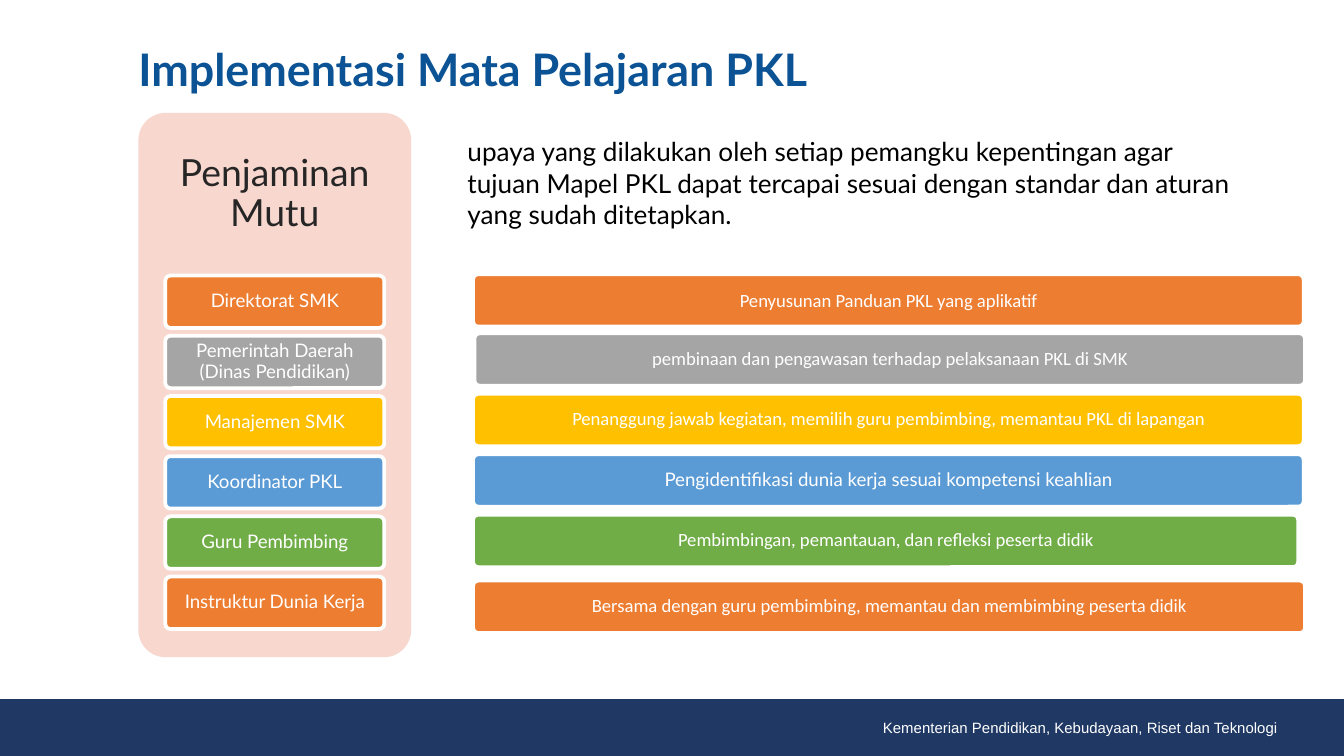
from pptx import Presentation
from pptx.dml.color import RGBColor
from pptx.enum.shapes import MSO_SHAPE
from pptx.enum.text import MSO_ANCHOR, MSO_AUTO_SIZE, PP_ALIGN
from pptx.util import Inches, Pt

WHITE = RGBColor(0xFF, 0xFF, 0xFF)
BLACK = RGBColor(0x00, 0x00, 0x00)
DARK = RGBColor(0x26, 0x26, 0x26)
TITLE_BLUE = RGBColor(0x0B, 0x53, 0x94)
NAVY = RGBColor(0x1F, 0x38, 0x64)
PINK = RGBColor(0xF8, 0xD7, 0xCE)
ORANGE = RGBColor(0xED, 0x7D, 0x31)
GRAY = RGBColor(0xA5, 0xA5, 0xA5)
GOLD = RGBColor(0xFF, 0xC0, 0x00)
BLUE = RGBColor(0x5B, 0x9B, 0xD5)
GREEN = RGBColor(0x70, 0xAD, 0x47)

FIRST_ROLE, LAST_ROLE, ROW_HEIGHT = 2.05, 4.29, 0.39

# Role, colour, duty, then font, left, top and width of the duty bar
ROWS = [
    ("Direktorat SMK", ORANGE, "Penyusunan Panduan PKL yang aplikatif",
     "Calibri", 3.52, 2.04, 6.18),
    ("Pemerintah Daerah (Dinas Pendidikan)", GRAY,
     "pembinaan dan pengawasan terhadap pelaksanaan PKL di SMK",
     "Calibri", 3.53, 2.48, 6.18),
    ("Manajemen SMK", GOLD,
     "Penanggung jawab kegiatan, memilih guru pembimbing, memantau PKL di lapangan",
     "Calibri", 3.52, 2.93, 6.18),
    ("Koordinator PKL", BLUE,
     "Pengidentifikasi dunia kerja sesuai kompetensi keahlian",
     "Lato", 3.52, 3.38, 6.18),
    ("Guru Pembimbing", GREEN,
     "Pembimbingan, pemantauan, dan refleksi peserta didik",
     "Calibri", 3.52, 3.83, 6.14),
    ("Instruktur Dunia Kerja", ORANGE,
     "Bersama dengan guru pembimbing, memantau dan membimbing peserta didik",
     "Calibri", 3.52, 4.32, 6.19),
]
ROW_PITCH = (LAST_ROLE - FIRST_ROLE) / (len(ROWS) - 1)


def write(tf, text, size=10, font="Lato", color=WHITE, bold=False,
          align=PP_ALIGN.LEFT, anchor=MSO_ANCHOR.TOP, spacing=1.0,
          insets=(0.1, 0.05)):
    """Put one formatted paragraph in a text frame."""
    tf.word_wrap = True
    tf.auto_size = MSO_AUTO_SIZE.NONE
    tf.vertical_anchor = anchor
    tf.margin_left = tf.margin_right = Inches(insets[0])
    tf.margin_top = tf.margin_bottom = Inches(insets[1])
    p = tf.paragraphs[0]
    p.alignment = align
    p.line_spacing = spacing
    r = p.add_run()
    r.text = text
    r.font.size = Pt(size)
    r.font.name = font
    r.font.bold = bold
    r.font.color.rgb = color


class Deck:
    def __init__(self):
        self.prs = Presentation()
        self.prs.slide_width = Inches(10)
        self.prs.slide_height = Inches(10) * 9 // 16
        self.s = self.prs.slides.add_slide(self.prs.slide_layouts[5])

    def title(self, text, x, y, w, h, **fmt):
        sp = self.s.shapes.title
        sp.left, sp.top, sp.width, sp.height = map(Inches, (x, y, w, h))
        write(sp.text_frame, text, **fmt)

    def text(self, text, x, y, w, h, **fmt):
        sp = self.s.shapes.add_textbox(*map(Inches, (x, y, w, h)))
        write(sp.text_frame, text, **fmt)

    def box(self, x, y, w, h, fill, line=None, line_width=1, rounded=True):
        kind = MSO_SHAPE.ROUNDED_RECTANGLE if rounded else MSO_SHAPE.RECTANGLE
        sp = self.s.shapes.add_shape(kind, *map(Inches, (x, y, w, h)))
        sp.shadow.inherit = False
        sp.fill.solid()
        sp.fill.fore_color.rgb = fill
        if rounded:
            sp.adjustments[0] = 0.1
        if line is None:
            sp.line.fill.background()
        else:
            sp.line.color.rgb = line
            sp.line.width = Pt(line_width)
        return sp

    def bar(self, text, x, y, w, fill, **fmt):
        sp = self.box(x, y, w, ROW_HEIGHT, fill, line=WHITE, line_width=2)
        write(sp.text_frame, text, align=PP_ALIGN.CENTER,
              anchor=MSO_ANCHOR.MIDDLE, insets=(0.04, 0.03), **fmt)


def main():
    deck = Deck()

    # Footer band
    deck.box(0, 5.21, 10, 0.41, NAVY, line=NAVY, rounded=False)
    deck.text("Kementerian Pendidikan, Kebudayaan, Riset dan Teknologi",
              5.67, 5.31, 3.91, 0.2, size=8, font="Arial",
              align=PP_ALIGN.RIGHT, insets=(0.07, 0.04))

    # Title and definition
    deck.title("Implementasi Mata Pelajaran PKL", 0.93, 0.21, 8.44, 0.63,
               size=24, color=TITLE_BLUE, bold=True, insets=(0.1, 0.1))
    deck.text("upaya yang dilakukan oleh setiap pemangku kepentingan agar "
              "tujuan Mapel PKL dapat tercapai sesuai dengan standar dan "
              "aturan yang sudah ditetapkan.",
              3.38, 0.96, 5.99, 0.81, size=14, color=BLACK)

    # Panel with its heading
    deck.box(1.03, 0.84, 2.03, 4.05, PINK)
    deck.text("Penjaminan Mutu", 1.03, 0.84, 2.03, 1.21, size=20, color=DARK,
              align=PP_ALIGN.CENTER, anchor=MSO_ANCHOR.MIDDLE, spacing=0.9,
              insets=(0.08, 0.08))

    # Roles in the panel, duties beside them
    for i, (role, color, duty, font, x, y, w) in enumerate(ROWS):
        deck.bar(role, 1.23, FIRST_ROLE + i * ROW_PITCH, 1.63, color,
                 spacing=0.9)
        deck.bar(duty, x, y, w, color, font=font, spacing=0.9 if i else 1.0)

    deck.prs.save("out.pptx")


if __name__ == "__main__":
    main()
